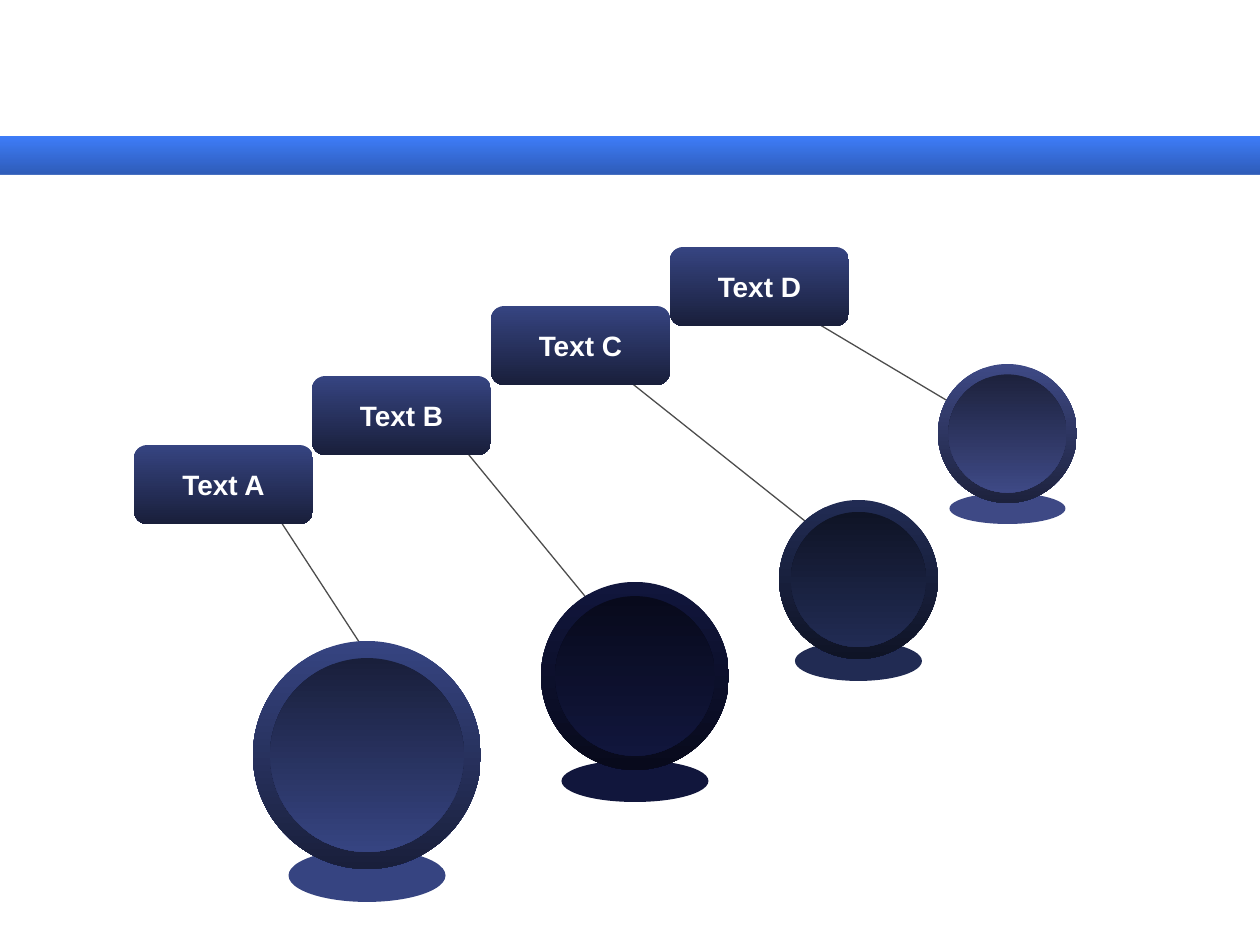
from lxml import etree
from pptx import Presentation
from pptx.dml.color import RGBColor
from pptx.enum.shapes import MSO_CONNECTOR, MSO_SHAPE
from pptx.enum.text import MSO_ANCHOR, PP_ALIGN
from pptx.oxml.ns import qn
from pptx.util import Pt

EMU_PER_PX = 914400 / 126
WIDTH, HEIGHT = 1260, 945
BOX_W, BOX_H = 179, 79
INNER_RATIO = 0.85
DARK_RATIO = 0.46
NAVY = "364481"

STEPS = [
    {"label": "Text A", "box": (134, 445), "line": (270, 505, 406, 714),
     "ball": (253, 641, 228), "shadow": (208, 157, 53), "color": NAVY},
    {"label": "Text B", "box": (312, 376), "line": (441, 421, 630, 651),
     "ball": (541, 582, 188), "shadow": (178, 147, 42), "color": "11163C"},
    {"label": "Text C", "box": (491, 306), "line": (605, 362, 815, 529),
     "ball": (779, 500, 159), "shadow": (141, 127, 40), "color": "212B53"},
    {"label": "Text D", "box": (670, 247), "line": (795, 310, 973, 416),
     "ball": (938, 364, 139), "shadow": (129, 116, 31), "color": "3E4985"},
]


def px(n):
    return round(n * EMU_PER_PX)


def rgb(color):
    return RGBColor.from_string(color)


def darken(color, ratio=DARK_RATIO):
    return "".join(f"{round(c * ratio):02X}" for c in bytes.fromhex(color))


def add_shape(s, kind, x, y, w, h, top, bottom=None):
    sp = s.shapes.add_shape(kind, px(x), px(y), px(w), px(h))
    sp.shadow.inherit = False
    sp.line.fill.background()
    if bottom is None:
        sp.fill.solid()
        sp.fill.fore_color.rgb = rgb(top)
        return sp
    sp.fill.gradient()
    sp.fill.gradient_angle = 270
    for stop, color, pos in zip(sp.fill.gradient_stops, (top, bottom), (0, 1)):
        stop.color.rgb = rgb(color)
        stop.position = pos
    return sp


def add_background(s, band_y, band_h):
    add_shape(s, MSO_SHAPE.RECTANGLE, 0, band_y, WIDTH, band_h,
              "3E7CF8", darken("3E7CF8", 0.74))
    body_y = band_y + band_h
    add_shape(s, MSO_SHAPE.RECTANGLE, 0, body_y, WIDTH, HEIGHT - body_y, "FFFFFF")


def add_line(s, x1, y1, x2, y2):
    line = s.shapes.add_connector(MSO_CONNECTOR.STRAIGHT, px(x1), px(y1), px(x2), px(y2))
    line.line.color.rgb = rgb("4D4D4D")
    line.line.width = Pt(0.75)
    etree.SubElement(line._element.spPr, qn("a:effectLst"))


def add_box(s, x, y, label):
    sp = add_shape(s, MSO_SHAPE.ROUNDED_RECTANGLE, x, y, BOX_W, BOX_H, NAVY, darken(NAVY))
    tf = sp.text_frame
    tf.text = label
    tf.word_wrap = False
    tf.vertical_anchor = MSO_ANCHOR.MIDDLE
    p = tf.paragraphs[0]
    p.alignment = PP_ALIGN.CENTER
    font = p.runs[0].font
    font.name, font.size, font.bold = "Arial", Pt(16), True
    font.color.rgb = rgb("FFFFFF")


def add_ball(s, x, y, size, shadow, color):
    drop, w, h = shadow
    add_shape(s, MSO_SHAPE.OVAL, x + (size - w) / 2, y + drop, w, h, color)
    dark = darken(color)
    add_shape(s, MSO_SHAPE.OVAL, x, y, size, size, color, dark)
    inner = size * INNER_RATIO
    inset = (size - inner) / 2
    add_shape(s, MSO_SHAPE.OVAL, x + inset, y + inset, inner, inner, dark, color)


def main():
    prs = Presentation()
    prs.slide_width, prs.slide_height = px(WIDTH), px(HEIGHT)
    s = prs.slides.add_slide(prs.slide_layouts[6])
    add_background(s, 136, 39)
    for step in STEPS:
        add_line(s, *step["line"])
    for step in STEPS:
        add_box(s, *step["box"], step["label"])
        add_ball(s, *step["ball"], step["shadow"], step["color"])
    prs.save("out.pptx")


if __name__ == "__main__":
    main()
